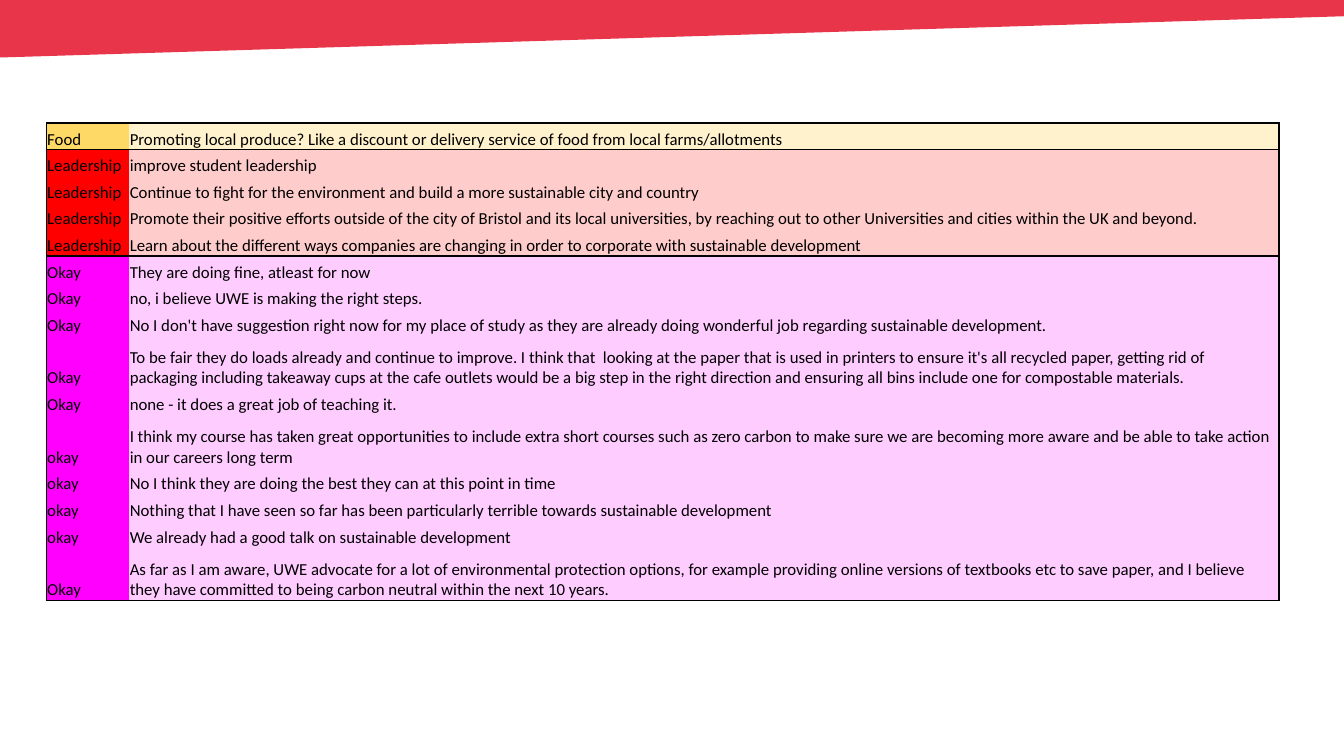
from lxml import etree
from pptx import Presentation
from pptx import util as u
from pptx.dml import color
from pptx.enum import text
from pptx.oxml import ns

# Category colour, answer colour, then (category, answer, lines of text)
GROUPS = [
    ("FFD966", "FFF2CC", [
        ("Food", "Promoting local produce? Like a discount or delivery service of food from local farms/allotments", 1),
    ]),
    ("FF0000", "FFCCCC", [
        ("Leadership", "improve student leadership", 1),
        ("Leadership", "Continue to fight for the environment and build a more sustainable city and country", 1),
        ("Leadership", "Promote their positive efforts outside of the city of Bristol and its local universities, "
         "by reaching out to other Universities and cities within the UK and beyond.", 1),
        ("Leadership", "Learn about the different ways companies are changing in order to corporate "
         "with sustainable development", 1),
    ]),
    ("FF00FF", "FFCCFF", [
        ("Okay", "They are doing fine, atleast for now", 1),
        ("Okay", "no, i believe UWE is making the right steps.", 1),
        ("Okay", "No I don't have suggestion right now for my place of study as they are already doing "
         "wonderful job regarding sustainable development.", 1),
        ("Okay", "To be fair they do loads already and continue to improve. I think that  looking at the paper "
         "that is used in printers to ensure it's all recycled paper, getting rid of packaging including "
         "takeaway cups at the cafe outlets would be a big step in the right direction and ensuring all bins "
         "include one for compostable materials.", 2),
        ("Okay", "none - it does a great job of teaching it.", 1),
        ("okay", "I think my course has taken great opportunities to include extra short courses such as zero "
         "carbon to make sure we are becoming more aware and be able to take action in our careers long term", 2),
        ("okay", "No I think they are doing the best they can at this point in time", 1),
        ("okay", "Nothing that I have seen so far has been particularly terrible towards sustainable development", 1),
        ("okay", "We already had a good talk on sustainable development", 1),
        ("Okay", "As far as I am aware, UWE advocate for a lot of environmental protection options, for example "
         "providing online versions of textbooks etc to save paper, and I believe they have committed to being "
         "carbon neutral within the next 10 years.", 2),
    ]),
]
ROW_HEIGHTS = {1: u.Cm(0.67), 2: u.Cm(1.33)}


def paint(fill, hex_color):
    fill.solid()
    fill.fore_color.rgb = color.RGBColor.from_string(hex_color)


def set_borders(cell, drawn):
    """Draw a thin black line on the sides in drawn (L, R, T, B) and none on the others."""
    properties = cell._tc.get_or_add_tcPr()
    for position, side in enumerate("LRTB"):
        line = etree.Element(ns.qn(f"a:ln{side}"), w=str(u.Pt(1)))
        if side in drawn:
            solid = etree.SubElement(line, ns.qn("a:solidFill"))
            etree.SubElement(solid, ns.qn("a:srgbClr"), val="000000")
        else:
            etree.SubElement(line, ns.qn("a:noFill"))
        properties.insert(position, line)


deck = Presentation()
deck.slide_width, deck.slide_height = u.Cm(33.87), u.Cm(19.05)
page = deck.slides.add_slide(deck.slide_layouts[6])

# Slanted band along the top
outline = page.shapes.build_freeform(0, 0)
outline.add_line_segments([
    (0, u.Cm(1.45)), (deck.slide_width, u.Cm(0.41)), (deck.slide_width, 0),
])
band = outline.convert_to_shape()
band.shadow.inherit = False
paint(band.fill, "E9354A")
band.line.fill.background()

# Table of answers
row_total = sum(len(answers) for _, _, answers in GROUPS)
table_height = sum(ROW_HEIGHTS[lines] for _, _, answers in GROUPS for _, _, lines in answers)
table = page.shapes.add_table(
    row_total, 2, u.Cm(1.17), u.Cm(3.1), u.Cm(31.06), table_height).table
table.first_row = table.horz_banding = False
table.columns[0].width, table.columns[1].width = u.Cm(2.08), u.Cm(28.98)

rows = iter(table.rows)
for category_color, answer_color, answers in GROUPS:
    for number, (category, answer, lines) in enumerate(answers, start=1):
        row = next(rows)
        row.height = ROW_HEIGHTS[lines]
        edges = ("T" if number == 1 else "") + ("B" if number == len(answers) else "")
        columns = [(category, category_color, "L"), (answer, answer_color, "R")]
        for cell, (words, background, outer_side) in zip(row.cells, columns):
            cell.text = words
            cell.vertical_anchor = text.MSO_ANCHOR.BOTTOM
            cell.margin_left = cell.margin_right = cell.margin_top = u.Cm(0.02)
            cell.margin_bottom = 0
            paint(cell.fill, background)
            set_borders(cell, outer_side + edges)
            font = cell.text_frame.paragraphs[0].font
            font.name, font.size = "Calibri", u.Pt(12)
            paint(font.fill, "000000")

deck.save("out.pptx")
